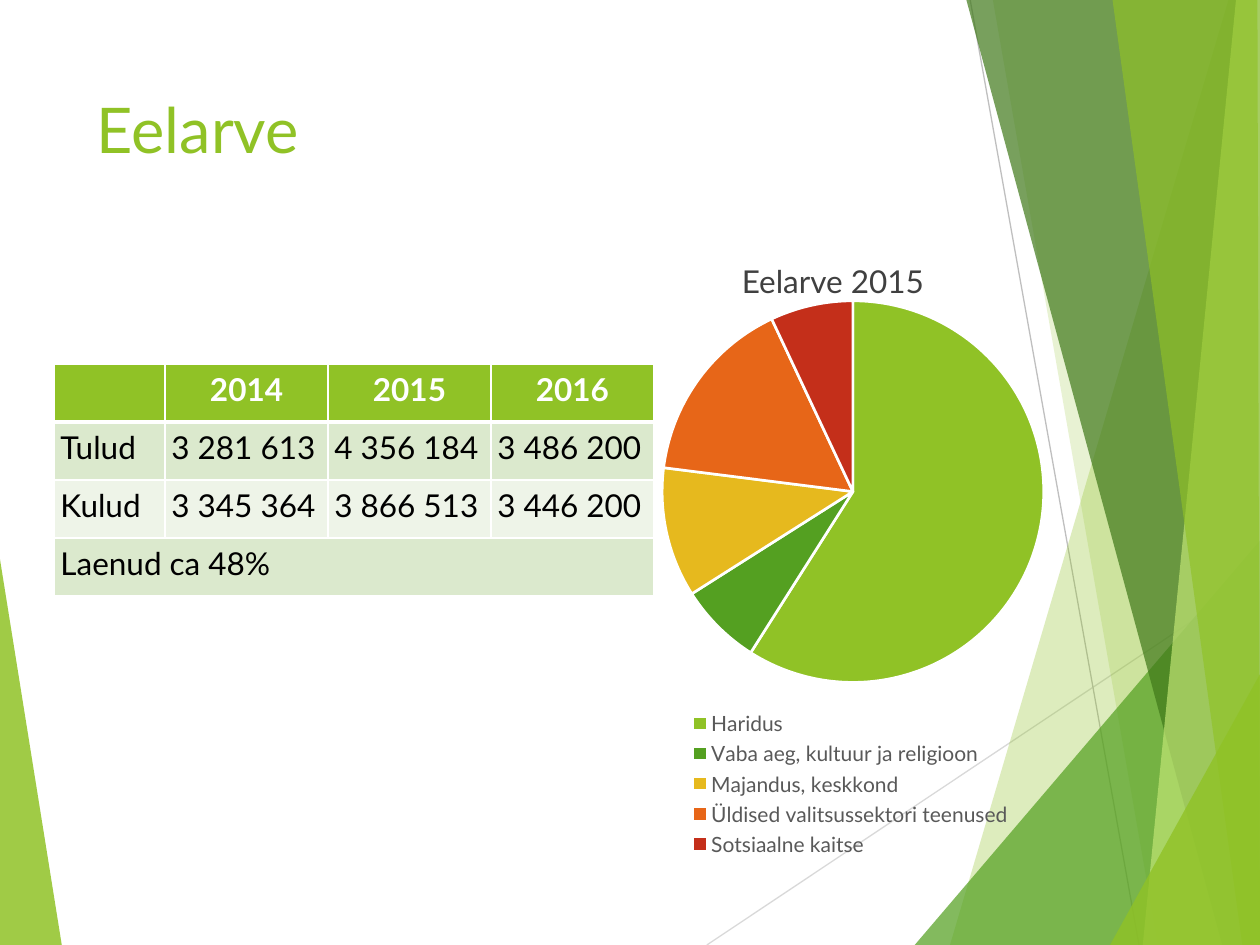
from collections import namedtuple
from lxml import etree
from pptx import Presentation
from pptx.chart.data import CategoryChartData
from pptx.dml.color import RGBColor
from pptx.enum.chart import XL_CHART_TYPE as ChartType, XL_LEGEND_POSITION as LegendPos
from pptx.enum.shapes import MSO_CONNECTOR as Connector
from pptx.enum.text import MSO_ANCHOR as Anchor, PP_ALIGN as Align
from pptx.oxml import parse_xml
from pptx.oxml.ns import nsdecls, qn
from pptx.util import Inches, Pt

# The slide is a grid of 100 columns by 75 rows
COLS, ROWS = 100, 75
UNIT = Inches(10) / COLS
FONT = "Lato"
Box = namedtuple("Box", "col row cols rows")

C = {
    "lime": "90C226", "green": "54A021", "forest": "3F7819", "pale": "C0E474",
    "yellow": "E6B91E", "orange": "E76618", "red": "C42F1A",
    "white": "FFFFFF", "black": "000000", "text": "404040", "legend": "595959",
    "band": "DBE9CD", "light": "EEF4E8", "line": "D9D9D9", "line_dark": "BFBFBF",
}

# colour, opacity in percent, corners as (column, row)
FACETS_LEFT = [("lime", 85, [(0, 44.4), (4.9, 75), (0, 75)])]
FACETS_RIGHT = [
    ("lime", 30, [(97.5, 0), (75.4, 75), (100, 75), (100, 0)]),
    ("lime", 20, [(78.8, 0), (91.9, 75), (100, 75), (100, 0)]),
    ("green", 72, [(72.6, 75), (100, 42.9), (100, 75)]),
    ("forest", 70, [(76.7, 0), (97, 75), (100, 75), (100, 0)]),
    ("pale", 70, [(98.1, 0), (90.7, 75), (100, 75), (100, 0)]),
    ("lime", 65, [(88.3, 0), (98.6, 75), (100, 75), (99.8, 0)]),
    ("lime", 80, [(88.1, 75), (100, 53.5), (100, 75)]),
]
RAYS = [("line", (56.1, 75), (100, 45.7)), ("line_dark", (77, 0), (90.4, 75))]

BUDGET = [
    ["", "2014", "2015", "2016"],
    ["Tulud", "3 281 613", "4 356 184", "3 486 200"],
    ["Kulud", "3 345 364", "3 866 513", "3 446 200"],
    ["Laenud ca 48%", "", "", ""],
]
SPENDING = [
    ("Haridus", 59, "lime"), ("Vaba aeg, kultuur ja religioon", 7, "green"),
    ("Majandus, keskkond", 11, "yellow"),
    ("Üldised valitsussektori teenused", 16, "orange"),
    ("Sotsiaalne kaitse", 7, "red"),
]


def rgb(name):
    return RGBColor.from_string(C[name])


def grid(*lengths):
    return [round(n * UNIT) for n in lengths]


def style_font(font, color, size, bold=False):
    values = {"name": FONT, "size": Pt(size), "bold": bold}
    for key, value in values.items():
        setattr(font, key, value)
    font.color.rgb = rgb(color)


def add_facets(s, box, facets):
    for color, opacity, corners in facets:
        points = [grid(box.col + x, box.row + y) for x, y in corners]
        builder = s.shapes.build_freeform(*points[0])
        builder.add_line_segments(points[1:], close=True)
        sp = builder.convert_to_shape()
        sp.shadow.inherit = False
        sp.line.fill.background()
        sp.fill.solid()
        sp.fill.fore_color.rgb = rgb(color)
        srgb = sp.fill._xPr.find(".//" + qn("a:srgbClr"))
        etree.SubElement(srgb, qn("a:alpha"), val=str(opacity * 1000))


def add_backdrop(s, box):
    add_facets(s, box, FACETS_LEFT)
    for color, start, end in RAYS:
        ends = [n for x, y in (start, end) for n in grid(box.col + x, box.row + y)]
        ray = s.shapes.add_connector(Connector.STRAIGHT, *ends)
        ray.line.color.rgb = rgb(color)
        ray.line.width = Pt(0.75)
        etree.SubElement(ray._element.spPr, qn("a:effectLst"))
    add_facets(s, box, FACETS_RIGHT)


def add_text(s, box, text, color, size, anchor=Anchor.TOP, align=Align.LEFT):
    tf = s.shapes.add_textbox(*grid(*box)).text_frame
    tf.word_wrap = True
    tf.vertical_anchor = anchor
    p = tf.paragraphs[0]
    p.alignment = align
    r = p.add_run()
    r.text = text
    style_font(r.font, color, size)


def set_borders(cell, bottom):
    """Draw white edges; bottom is the width of the lower one in points."""
    tc_pr = cell._tc.get_or_add_tcPr()
    for i, (side, width) in enumerate({"L": 1, "R": 1, "T": 1, "B": bottom}.items()):
        tc_pr.insert(i, parse_xml(
            f'<a:ln{side} {nsdecls("a")} w="{Pt(width)}"><a:solidFill>'
            f'<a:srgbClr val="{C["white"]}"/></a:solidFill></a:ln{side}>'))


def add_budget_table(s, box):
    table = s.shapes.add_table(len(BUDGET), len(BUDGET[0]), *grid(*box)).table
    label = 8.8
    year = (box.cols - label) / 3
    for column, width in zip(table.columns, grid(label, year, year, year)):
        column.width = width
    for i, values in enumerate(BUDGET):
        header = i == 0
        table.rows[i].height = grid(box.rows / len(BUDGET))[0]
        for j, value in enumerate(values):
            cell = table.cell(i, j)
            for side in ("left", "right", "top", "bottom"):
                setattr(cell, f"margin_{side}", Inches(0.05))
            cell.fill.solid()
            cell.fill.fore_color.rgb = rgb("lime" if header else "band" if i % 2 else "light")
            set_borders(cell, 3 if header else 1)
            p = cell.text_frame.paragraphs[0]
            p.alignment = Align.CENTER if header else Align.LEFT
            style_font(p.font, "white" if header else "black", 18, header)
            if value:
                r = p.add_run()
                r.text = value
                style_font(r.font, "white" if header else "black", 18, header)
    table.cell(3, 0).merge(table.cell(3, 3))


def layout_xml(x, y, w, h, inner=False):
    """Manual chart layout in shares of the chart's size."""
    target = '<c:layoutTarget val="inner"/>' if inner else ""
    return parse_xml(
        f'<c:layout {nsdecls("c")}><c:manualLayout>{target}'
        '<c:xMode val="edge"/><c:yMode val="edge"/>'
        f'<c:x val="{x}"/><c:y val="{y}"/><c:w val="{w}"/><c:h val="{h}"/>'
        '</c:manualLayout></c:layout>')


def place_part(part, layout, before):
    for old in part.findall(qn("c:layout")):
        part.remove(old)
    part.find(qn(before)).addprevious(layout)


def add_spending_pie(s, box):
    names, shares, colors = zip(*SPENDING)
    data = CategoryChartData()
    data.categories = names
    data.add_series("Series 1", shares)
    chart = s.shapes.add_chart(ChartType.PIE, *grid(*box), data).chart
    chart.has_title = False
    style_font(chart.font, "black", 10)
    plot = chart.plots[0]
    plot.vary_by_categories = True
    for i, color in enumerate(colors):
        fmt = plot.series[0].points[i].format
        fmt.fill.solid()
        fmt.fill.fore_color.rgb = rgb(color)
        fmt.line.color.rgb = rgb("white")
        fmt.line.width = Pt(1.5)
    chart.has_legend = True
    legend = chart.legend
    legend.position = LegendPos.BOTTOM
    legend.include_in_layout = False
    style_font(legend.font, "legend", 12)
    place_part(legend._element, layout_xml(0.12, 0.73, 0.75, 0.27), "c:overlay")
    area = chart._chartSpace.find(".//" + qn("c:plotArea"))
    place_part(area, layout_xml(0.07, 0.03, 0.86, 0.66, inner=True), "c:pieChart")


def main():
    prs = Presentation()
    prs.slide_width, prs.slide_height = grid(COLS, ROWS)
    s = prs.slides.add_slide(prs.slide_layouts[6])
    add_backdrop(s, Box(0, 0, COLS, ROWS))
    add_text(s, Box(6.7, 6.7, 69.4, 14.4), "Eelarve", "lime", 36)
    add_budget_table(s, Box(4.3, 28.9, 47.6, 18.4))
    add_text(s, Box(49.2, 18, 33.8, 6.3), "Eelarve 2015", "text", 18,
             Anchor.BOTTOM, Align.CENTER)
    add_spending_pie(s, Box(50, 22.5, 35.4, 45.9))
    prs.save("out.pptx")


if __name__ == "__main__":
    main()
